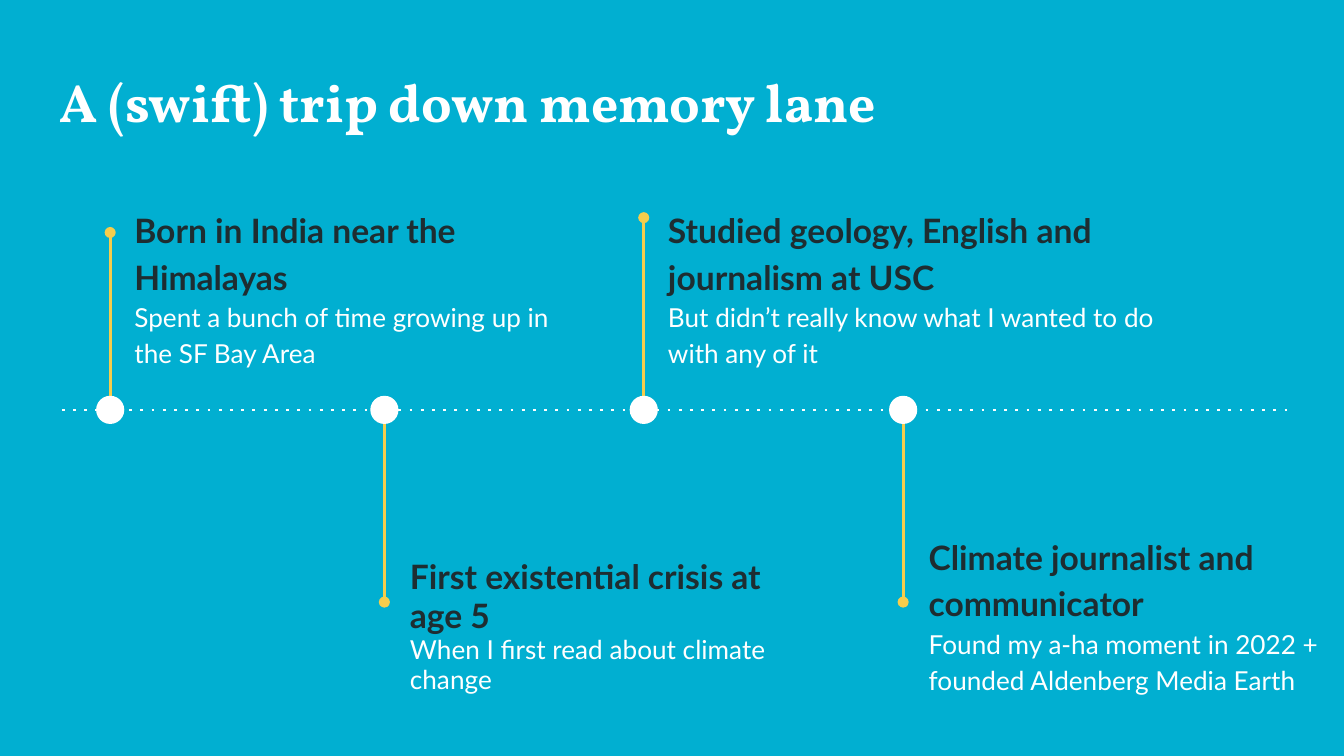
"""Build a timeline slide with four milestones alternating around a dotted axis."""
import dataclasses
import typing

import pptx
import pptx.dml.color
import pptx.enum.shapes
import pptx.enum.text
import pptx.oxml.ns
import pptx.oxml.xmlchemy
import pptx.util
from pptx.util import Inches

COLORS = {
    "background": "01AFD1",
    "light": "FFFFFF",
    "dark": "1E2D31",
    "accent": "F6CD4C",
}
AXIS_Y = 3.05
DOT_SIZE = 0.21
COMPARISON_LAYOUT = 4


@dataclasses.dataclass(frozen=True)
class Milestone:
    heading: str
    detail: str
    x: float
    stem_end: float
    left: float
    top: float
    width: float
    height: float
    line_spacing: float = 1.15


MILESTONES = [
    Milestone("Born in India near the Himalayas",
              "Spent a bunch of time growing up in the SF Bay Area",
              0.82, 1.73, 0.9, 1.42, 3.6, 1.43),
    Milestone("First existential crisis at age 5",
              "When I first read about climate change",
              2.86, 4.48, 2.95, 4.06, 3.24, 1.22, 0.95),
    Milestone("Studied geology, English and journalism at USC",
              "But didn’t really know what I wanted to do with any of it",
              4.79, 1.62, 4.87, 1.42, 4.13, 1.43),
    Milestone("Climate journalist and communicator",
              "Found my a-ha moment in 2022 + founded Aldenberg Media Earth",
              6.72, 4.48, 6.81, 3.85, 3.19, 1.54),
]


def color(name: str) -> pptx.dml.color.RGBColor:
    """Return the named palette color."""
    return pptx.dml.color.RGBColor.from_string(COLORS[name])


def add_child(parent: typing.Any, tag: str, **attributes: str) -> None:
    """Append a DrawingML element to its parent."""
    child = pptx.oxml.xmlchemy.OxmlElement(tag)
    for name, value in attributes.items():
        child.set(name, value)
    parent.append(child)


def place(shape: typing.Any, left: float, top: float, width: float, height: float) -> None:
    """Move a placeholder and give its text frame plain top-left settings."""
    shape.left, shape.top = Inches(left), Inches(top)
    shape.width, shape.height = Inches(width), Inches(height)
    frame = shape.text_frame
    frame.word_wrap = True
    frame.auto_size = pptx.enum.text.MSO_AUTO_SIZE.NONE
    frame.vertical_anchor = pptx.enum.text.MSO_ANCHOR.TOP
    frame.margin_left = frame.margin_right = Inches(0.1)
    frame.margin_top = frame.margin_bottom = Inches(0.1)


def write(paragraph: typing.Any, text: str, font: str, size: float,
          color_name: str, bold: bool) -> None:
    """Add one left-aligned run without inherited paragraph spacing."""
    paragraph.alignment = pptx.enum.text.PP_ALIGN.LEFT
    paragraph.space_before = pptx.util.Pt(0)
    run = paragraph.add_run()
    run.text = text
    run.font.name = font
    run.font.size = pptx.util.Pt(size)
    run.font.bold = bold
    run.font.color.rgb = color(color_name)


def add_line(slide: typing.Any, start: tuple[float, float], end: tuple[float, float],
             color_name: str, style_tag: str, **style: str) -> None:
    """Draw a straight line with one extra dash or line-end style."""
    connector = slide.shapes.add_connector(
        pptx.enum.shapes.MSO_CONNECTOR.STRAIGHT,
        *(Inches(value) for value in (*start, *end)))
    connector.line.color.rgb = color(color_name)
    connector.line.width = pptx.util.Pt(1.5)
    properties = connector.element.spPr
    add_child(properties.find(pptx.oxml.ns.qn("a:ln")), style_tag, **style)
    add_child(properties, "a:effectLst")


def add_marker(slide: typing.Any, milestone: Milestone) -> None:
    """Draw a milestone's stem and its dot on the axis."""
    radius = DOT_SIZE / 2
    direction = 1 if milestone.stem_end > AXIS_Y else -1
    add_line(slide, (milestone.x, AXIS_Y + direction * radius),
             (milestone.x, milestone.stem_end), "accent", "a:tailEnd", type="oval")
    dot = slide.shapes.add_shape(
        pptx.enum.shapes.MSO_SHAPE.OVAL, Inches(milestone.x - radius),
        Inches(AXIS_Y - radius), Inches(DOT_SIZE), Inches(DOT_SIZE))
    dot.shadow.inherit = False
    dot.fill.solid()
    dot.fill.fore_color.rgb = color("light")
    dot.line.fill.background()


def fill_body(shape: typing.Any, milestone: Milestone) -> None:
    """Write a milestone's heading and detail into a body placeholder."""
    place(shape, milestone.left, milestone.top, milestone.width, milestone.height)
    heading = shape.text_frame.paragraphs[0]
    detail = shape.text_frame.add_paragraph()
    write(heading, milestone.heading, "Lato", 18, "dark", True)
    write(detail, milestone.detail, "Lato", 14, "light", False)
    heading.space_after, detail.space_after = pptx.util.Pt(0), pptx.util.Pt(12)
    for paragraph in (heading, detail):
        paragraph.line_spacing = milestone.line_spacing
        properties = paragraph._p.get_or_add_pPr()
        properties.set("marL", "0")
        properties.set("indent", "0")
        add_child(properties, "a:buNone")


def main() -> None:
    """Build and save the presentation."""
    presentation = pptx.Presentation()
    presentation.slide_width = Inches(10)
    presentation.slide_height = Inches(10 * 9 / 16)
    slide = presentation.slides.add_slide(presentation.slide_layouts[COMPARISON_LAYOUT])
    slide.background.fill.solid()
    slide.background.fill.fore_color.rgb = color("background")

    title, *bodies = slide.placeholders
    place(title, 0.34, 0.41, 9.32, 0.71)
    write(title.text_frame.paragraphs[0], "A (swift) trip down memory lane",
          "Vollkorn", 28.8, "light", True)

    add_line(slide, (0.46, AXIS_Y), (9.58, AXIS_Y), "light", "a:prstDash", val="dot")
    for body, milestone in zip(bodies, MILESTONES):
        add_marker(slide, milestone)
        fill_body(body, milestone)
    presentation.save("out.pptx")


if __name__ == "__main__":
    main()
